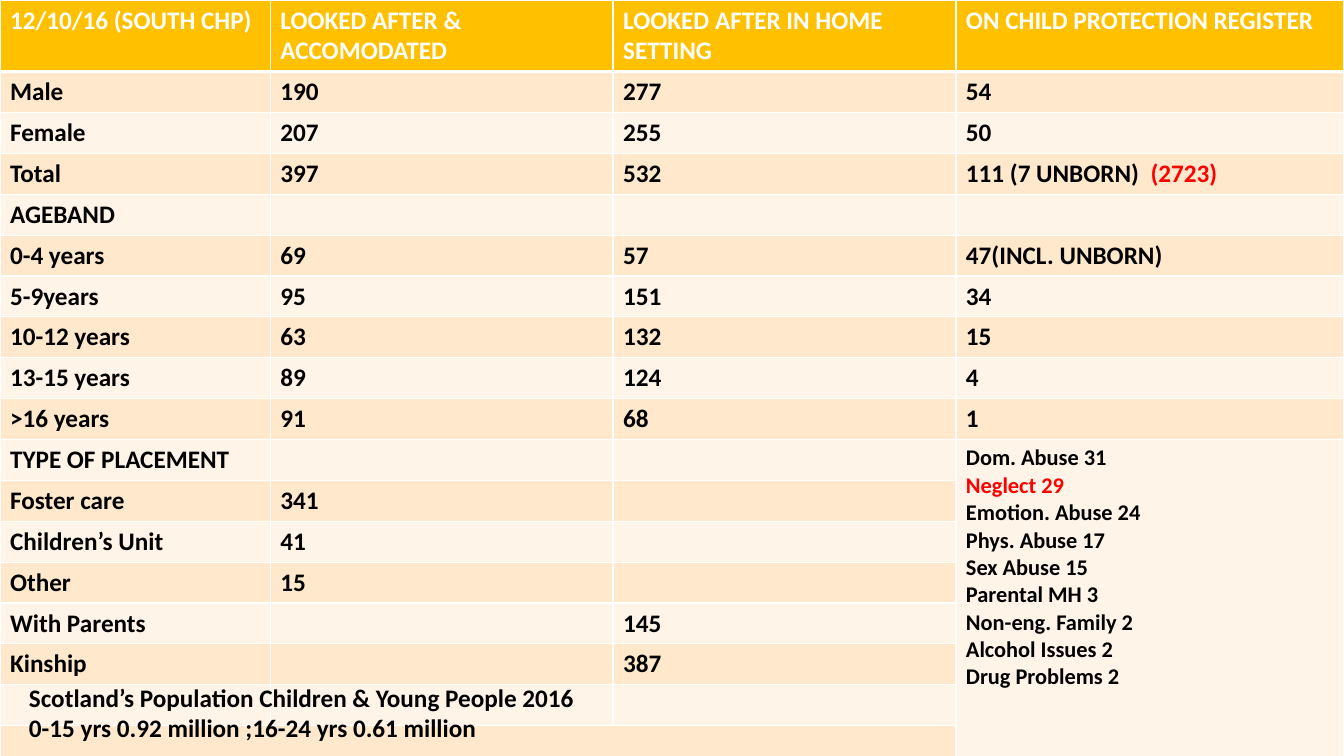
from lxml.etree import SubElement
from pptx import Presentation
from pptx.dml.color import RGBColor
from pptx.enum.text import MSO_AUTO_SIZE
from pptx.oxml.ns import qn
from pptx.util import Cm, Pt

WHITE, BLACK, RED = "FFFFFF", "000000", "FF0000"
GOLD, BANDS = "FFC000", ("FFF4E7", "FFE8CC")
SKY = [(0, "7030A0"), (58, "DAE3F3"), (83, "B5D2EC"), (100, "CEE1F2")]

WIDTHS = [6.81, 8.64, 8.64, 9.78]
HEIGHTS = [1.63] + [0.94] * 16 + [1.45]
SPAN = 10  # first row of the merged list of causes

ROWS = [
    ["12/10/16 (SOUTH CHP)", "LOOKED AFTER & ACCOMODATED",
     "LOOKED AFTER IN HOME SETTING", "ON CHILD PROTECTION REGISTER"],
    ["Male", "190", "277", "54"],
    ["Female", "207", "255", "50"],
    ["Total", "397", "532", [("111 (7 UNBORN)  ", BLACK), ("(2723)", RED)]],
    ["AGEBAND"],
    ["0-4 years", "69", "57", "47(INCL. UNBORN)"],
    ["5-9years", "95", "151", "34"],
    ["10-12 years", "63", "132", "15"],
    ["13-15 years", "89", "124", "4"],
    [">16 years", "91", "68", "1"],
    ["TYPE OF PLACEMENT"],
    ["Foster care", "341"],
    ["Children’s Unit", "41"],
    ["Other", "15"],
    ["With Parents", "", "145"],
    ["Kinship", "", "387"],
    [],
    [],
]
CAUSES = ["Dom. Abuse 31", [("Neglect 29", RED)], "Emotion. Abuse 24",
          "Phys. Abuse 17", "Sex Abuse 15", "Parental MH 3",
          "Non-eng. Family 2", "Alcohol Issues 2", "Drug Problems 2"]
NOTE = ["Scotland’s Population Children & Young People 2016",
        "0-15 yrs 0.92 million ;16-24 yrs 0.61 million"]


def rgb(code):
    return RGBColor.from_string(code)


def write(frame, lines, size=18, color=BLACK):
    """Each line is a string or a list of (text, colour) runs."""
    for i, line in enumerate(lines):
        para = frame.add_paragraph() if i else frame.paragraphs[0]
        runs = [(line, color)] if isinstance(line, str) else line
        for text, tint in runs:
            run = para.add_run()
            run.text = text
            style = {"size": Pt(size), "bold": True, "name": "Calibri"}
            for key, value in style.items():
                setattr(run.font, key, value)
            run.font.color.rgb = rgb(tint)


def edge(cell, base):
    """White lines on all four sides, the lower one of the given width."""
    props = cell._tc.get_or_add_tcPr()
    for side, width in zip("LRTB", (1, 1, 1, base)):
        line = SubElement(props, qn("a:ln" + side), w=str(Pt(width)))
        fill = SubElement(line, qn("a:solidFill"))
        SubElement(fill, qn("a:srgbClr"), val=WHITE)


def shade(slide):
    """Vertical gradient behind the slide."""
    slide.background.fill.gradient()
    grad = slide._element.find(".//" + qn("a:gradFill"))
    stops = grad.find(qn("a:gsLst"))
    stops.clear()
    for spot, code in SKY:
        stop = SubElement(stops, qn("a:gs"), pos=str(spot * 1000))
        SubElement(stop, qn("a:srgbClr"), val=code)
    grad.find(qn("a:lin")).set("ang", "5400000")


def add_grid(slide, left, top):
    """Table of children by sex, age and placement."""
    table = slide.shapes.add_table(
        len(ROWS), len(WIDTHS), Cm(left), Cm(top),
        Cm(sum(WIDTHS)), Cm(sum(HEIGHTS))).table
    for col, width in zip(table.columns, WIDTHS):
        col.width = Cm(width)
    for row, height in zip(table.rows, HEIGHTS):
        row.height = Cm(height)

    # Fills, lines and single-cell text
    for r, texts in enumerate(ROWS):
        for c in range(len(WIDTHS)):
            cell = table.cell(r, c)
            edge(cell, 1 if r else 3)
            cell.fill.solid()
            cell.fill.fore_color.rgb = rgb(BANDS[r % 2] if r else GOLD)
            if c < len(texts) and texts[c]:
                write(cell.text_frame, [texts[c]],
                      color=BLACK if r else WHITE)

    # Merged cells
    last = len(ROWS) - 1
    table.cell(last, 0).merge(table.cell(last, 2))
    causes = table.cell(SPAN, 3)
    causes.merge(table.cell(last, 3))
    write(causes.text_frame, CAUSES, 16)


def add_note(slide, left, top, width, height):
    """Population figures over the foot of the table."""
    box = slide.shapes.add_textbox(Cm(left), Cm(top), Cm(width), Cm(height))
    frame = box.text_frame
    frame.word_wrap = False
    frame.auto_size = MSO_AUTO_SIZE.SHAPE_TO_FIT_TEXT
    write(frame, NOTE)


def main():
    deck = Presentation()
    deck.slide_width, deck.slide_height = Cm(33.87), Cm(19.05)
    slide = deck.slides.add_slide(deck.slide_layouts[6])
    shade(slide)
    add_grid(slide, 0, 0)
    add_note(slide, 0.48, 17.07, 14.5, 1.8)
    deck.save("out.pptx")


if __name__ == "__main__":
    main()
